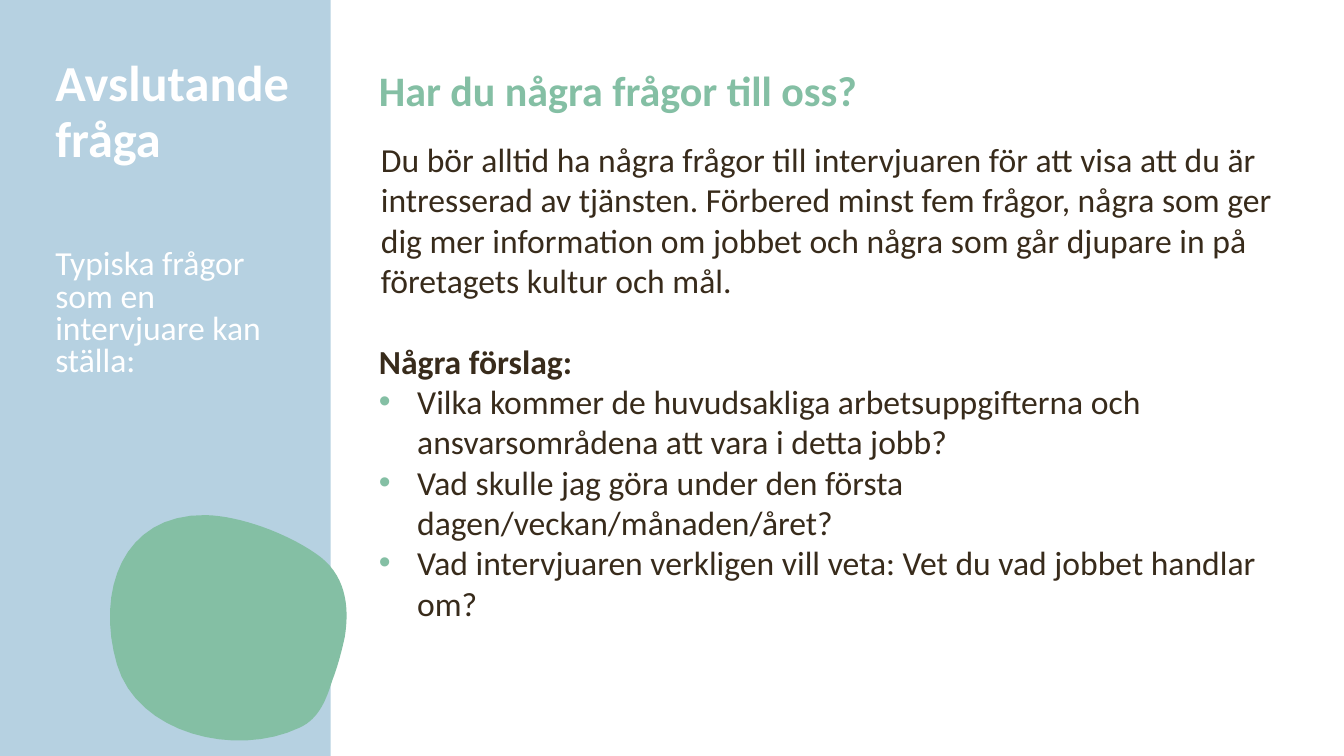
from lxml import etree
from pptx import Presentation
from pptx.dml.color import RGBColor
from pptx.enum.shapes import MSO_SHAPE
from pptx.enum.text import MSO_ANCHOR, PP_ALIGN
from pptx.oxml.ns import qn
from pptx.util import Inches, Pt

RECTANGLE = MSO_SHAPE.RECTANGLE
TOP = MSO_ANCHOR.TOP
LEFT = PP_ALIGN.LEFT

COLOURS = {"panel": "B6D1E1", "green": "84BFA4", "white": "FFFFFF", "brown": "382B1B"}
FONT = "Calibri"
BULLET_INDENT = 0.38
BODY_LEADING = 28.8
CURVE_STEPS = 16

# Content: each paragraph is (text, options)
BODY = [
    ("Du bör alltid ha några frågor till intervjuaren för att visa att du är intresserad "
     "av tjänsten. Förbered minst fem frågor, några som ger dig mer information om jobbet "
     "och några som går djupare in på företagets kultur och mål.", {"margin": 0.02}),
    ("Några förslag:", {"bold": True, "before": BODY_LEADING}),
    ("Vilka kommer de huvudsakliga arbetsuppgifterna och ansvarsområdena att vara i detta jobb?",
     {"bullet": True}),
    ("Vad skulle jag göra under den första dagen/veckan/månaden/året?", {"bullet": True}),
    ("Vad intervjuaren verkligen vill veta: Vet du vad jobbet handlar om?", {"bullet": True}),
]
TEXT_BOXES = [
    {"box": (0.45, 0.5, 2.54, 2.5), "size": 36, "colour": "white", "bold": True,
     "leading": 40.2, "paragraphs": [("Avslutande fråga", {})]},
    {"box": (0.45, 2.43, 2.63, 2.1), "size": 24, "colour": "white", "bold": False,
     "leading": 23.2, "paragraphs": [("Typiska frågor som en intervjuare kan ställa:", {})]},
    {"box": (3.66, 1.33, 9.36, 5.76), "size": 24, "colour": "brown", "bold": False,
     "leading": BODY_LEADING, "paragraphs": BODY},
    {"box": (3.66, 0.59, 8.74, 0.57), "size": 30, "colour": "green", "bold": True,
     "leading": None, "paragraphs": [("Har du några frågor till oss?", {})]},
]

# Blob outline: start point, then two control points and an end point per curve
BLOB_START = (3.42, 6.32)
BLOB_CURVES = [
    ((3.47, 6.01), (3.43, 5.69), (3.13, 5.49)),
    ((2.84, 5.29), (2.39, 5.12), (2.04, 5.11)),
    ((1.21, 5.1), (0.95, 5.87), (1.16, 6.59)),
    ((1.36, 7.28), (2.34, 7.52), (2.97, 7.22)),
    ((3.17, 7.13), (3.24, 6.93), (3.3, 6.74)),
    ((3.35, 6.61), (3.39, 6.46), (3.42, 6.32)),
]


def rgb(name):
    return RGBColor.from_string(COLOURS[name])


def paint(shape, colour):
    shape.shadow.inherit = False
    shape.fill.solid()
    shape.fill.fore_color.rgb = rgb(colour)
    shape.line.fill.background()


def curve_points(start, curves):
    for first, second, end in curves:
        for step in range(1, CURVE_STEPS + 1):
            t = step / CURVE_STEPS
            weights = ((1 - t) ** 3, 3 * t * (1 - t) ** 2, 3 * t ** 2 * (1 - t), t ** 3)
            corners = (start, first, second, end)
            yield tuple(Inches(sum(w * c[axis] for w, c in zip(weights, corners)))
                        for axis in (0, 1))
        start = end


def add_bullet(paragraph):
    properties = paragraph._p.get_or_add_pPr()
    properties.set("marL", str(Inches(BULLET_INDENT)))
    properties.set("indent", str(-Inches(BULLET_INDENT)))
    colour = etree.SubElement(properties, qn("a:buClr"))
    etree.SubElement(colour, qn("a:srgbClr"), val=COLOURS["green"])
    etree.SubElement(properties, qn("a:buFont"), typeface="Arial")
    etree.SubElement(properties, qn("a:buChar"), char="•")


def add_text(slide, item):
    frame = slide.shapes.add_textbox(*map(Inches, item["box"])).text_frame
    frame.word_wrap = True
    frame.vertical_anchor = TOP
    for index, (text, options) in enumerate(item["paragraphs"]):
        paragraph = frame.add_paragraph() if index else frame.paragraphs[0]
        paragraph.text = text
        paragraph.alignment = LEFT
        if item["leading"]:
            paragraph.line_spacing = Pt(item["leading"])
        if "before" in options:
            paragraph.space_before = Pt(options["before"])
        if "margin" in options:
            paragraph._p.get_or_add_pPr().set("marL", str(Inches(options["margin"])))
        if options.get("bullet"):
            add_bullet(paragraph)
        font_format = {"name": FONT, "size": Pt(item["size"]),
                       "bold": options.get("bold", item["bold"])}
        for run in paragraph.runs:
            for attribute, value in font_format.items():
                setattr(run.font, attribute, value)
            run.font.color.rgb = rgb(item["colour"])


def main():
    presentation = Presentation()
    presentation.slide_width = Inches(13.33)
    presentation.slide_height = Inches(7.5)
    slide = presentation.slides.add_slide(presentation.slide_layouts[6])

    # Side panel
    panel = slide.shapes.add_shape(RECTANGLE, 0, 0, Inches(3.28), presentation.slide_height)
    paint(panel, "panel")

    # Green blob
    builder = slide.shapes.build_freeform(*map(Inches, BLOB_START))
    builder.add_line_segments(list(curve_points(BLOB_START, BLOB_CURVES)), close=True)
    paint(builder.convert_to_shape(), "green")

    # Texts
    for item in TEXT_BOXES:
        add_text(slide, item)

    presentation.save("out.pptx")


if __name__ == "__main__":
    main()
